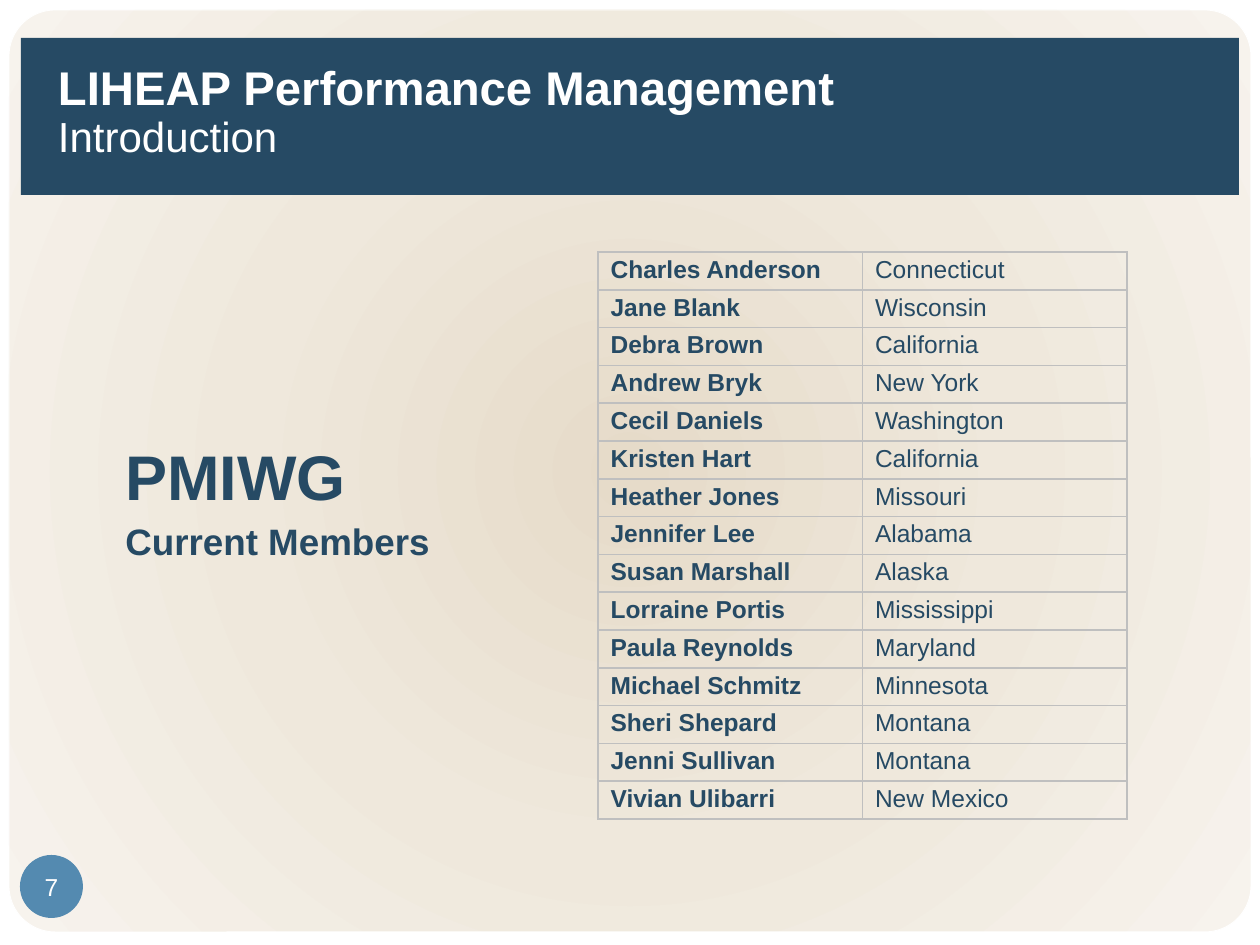
from lxml import etree
from pptx import Presentation
from pptx.dml.color import RGBColor
from pptx.enum.shapes import MSO_SHAPE as SHAPE
from pptx.enum.text import MSO_ANCHOR as ANCHOR, PP_ALIGN as ALIGN
from pptx.oxml import parse_xml
from pptx.oxml.ns import nsdecls, qn
from pptx.util import Emu, Pt

NAVY, BLUE, WHITE, GREY = "264A64", "548AB0", "FFFFFF", "BFBFBF"
FONT = "Arial"
GLOW = [(0, "E6DBC9"), (50, "EFE8DC"), (100, "F7F3ED")]

TITLE, SUBTITLE = "LIHEAP Performance Management", "Introduction"
CAPTION = [("PMIWG", 36), ("Current Members", 21)]
PAGE = "7"
MEMBERS = [
    ("Charles Anderson", "Connecticut"),
    ("Jane Blank", "Wisconsin"),
    ("Debra Brown", "California"),
    ("Andrew Bryk", "New York"),
    ("Cecil Daniels", "Washington"),
    ("Kristen Hart", "California"),
    ("Heather Jones", "Missouri"),
    ("Jennifer Lee", "Alabama"),
    ("Susan Marshall", "Alaska"),
    ("Lorraine Portis", "Mississippi"),
    ("Paula Reynolds", "Maryland"),
    ("Michael Schmitz", "Minnesota"),
    ("Sheri Shepard", "Montana"),
    ("Jenni Sullivan", "Montana"),
    ("Vivian Ulibarri", "New Mexico"),
]

# Left, top, width, height in px
PANEL = (9, 10, 1242, 922)
BANNER = (21, 38, 1218, 157)
BADGE = (20, 855, 63, 63)
CAPTION_BOX = (113, 431, 517, 179)
TABLE = (598, 252, 529, 567)


def px(n):
    return Emu(round(n * 914400 / 126))


def box(rect):
    return [px(n) for n in rect]


def color(hex_):
    return RGBColor.from_string(hex_)


def style(font, size, hex_, bold=False):
    font.name, font.size, font.bold = FONT, Pt(size), bold
    font.color.rgb = color(hex_)


def add_shape(slide, kind, rect, fill=None):
    sp = slide.shapes.add_shape(kind, *box(rect))
    sp.shadow.inherit = False
    sp.line.fill.background()
    if fill:
        sp.fill.solid()
        sp.fill.fore_color.rgb = color(fill)
    return sp


def set_margins(tf, left, top, right, bottom):
    tf.margin_left, tf.margin_top = px(left), px(top)
    tf.margin_right, tf.margin_bottom = px(right), px(bottom)


def fill_radial(sp, stops):
    """Fill a shape with a circular gradient that starts at its centre."""
    gs = "".join(f'<a:gs pos="{pos * 1000}"><a:srgbClr val="{hex_}"/></a:gs>'
                 for pos, hex_ in stops)
    grad = parse_xml(
        f'<a:gradFill {nsdecls("a")} rotWithShape="1"><a:gsLst>{gs}</a:gsLst>'
        '<a:path path="circle"><a:fillToRect l="50000" t="50000" r="50000" b="50000"/>'
        '</a:path></a:gradFill>')
    sp._element.spPr.find(qn("a:prstGeom")).addnext(grad)


def set_borders(cell, hex_, width):
    tcPr = cell._tc.get_or_add_tcPr()
    for i, side in enumerate(("lnL", "lnR", "lnT", "lnB")):
        ln = etree.Element(qn(f"a:{side}"), w=str(Pt(width)))
        fill = etree.SubElement(ln, qn("a:solidFill"))
        etree.SubElement(fill, qn("a:srgbClr"), val=hex_)
        tcPr.insert(i, ln)


def add_panel(slide):
    sp = add_shape(slide, SHAPE.ROUNDED_RECTANGLE, PANEL)
    sp.adjustments[0] = 0.05
    fill_radial(sp, GLOW)
    sp.line.color.rgb = color(WHITE)
    sp.line.width = Pt(0.5)


def add_members(slide):
    frame = slide.shapes.add_table(len(MEMBERS), 2, *box(TABLE))
    table = frame.table
    table.first_row = table.horz_banding = False
    for row, texts in zip(table.rows, MEMBERS):
        row.height = px(TABLE[3] / len(MEMBERS))
        for col, (cell, text) in enumerate(zip(row.cells, texts)):
            cell.fill.background()
            cell.vertical_anchor = ANCHOR.MIDDLE
            set_borders(cell, GREY, 1)
            p = cell.text_frame.paragraphs[0]
            p.text = text
            p.line_spacing = 0.9
            style(p.font, 14, NAVY, bold=col == 0)


def add_banner(slide):
    tf = add_shape(slide, SHAPE.RECTANGLE, BANNER, NAVY).text_frame
    tf.word_wrap = True
    tf.vertical_anchor = ANCHOR.MIDDLE
    set_margins(tf, 37, 6, 13, 13)
    p = tf.paragraphs[0]
    p.alignment = ALIGN.LEFT
    p.line_spacing = 0.9
    r = p.add_run()
    r.text = TITLE
    style(r.font, 27, WHITE, bold=True)
    p.add_line_break()
    r = p.add_run()
    r.text = SUBTITLE
    style(r.font, 24, WHITE)


def add_badge(slide):
    tf = add_shape(slide, SHAPE.OVAL, BADGE, BLUE).text_frame
    tf.word_wrap = False
    tf.vertical_anchor = ANCHOR.MIDDLE
    set_margins(tf, 0, 0, 0, 0)
    p = tf.paragraphs[0]
    p.text = PAGE
    p.alignment = ALIGN.CENTER
    style(p.font, 14, WHITE)


def add_caption(slide):
    tf = slide.shapes.add_textbox(*box(CAPTION_BOX)).text_frame
    tf.word_wrap = True
    for i, (text, size) in enumerate(CAPTION):
        p = tf.add_paragraph() if i else tf.paragraphs[0]
        p.text = text
        p.space_before = Pt(3.7 if i else 0)
        style(p.font, size, NAVY, bold=True)


def main():
    prs = Presentation()
    prs.slide_width, prs.slide_height = px(1260), px(945)
    slide = prs.slides.add_slide(prs.slide_layouts[6])
    bg = slide.background.fill
    bg.solid()
    bg.fore_color.rgb = color(WHITE)
    add_panel(slide)
    add_members(slide)
    add_banner(slide)
    add_badge(slide)
    add_caption(slide)
    prs.save("out.pptx")


if __name__ == "__main__":
    main()
